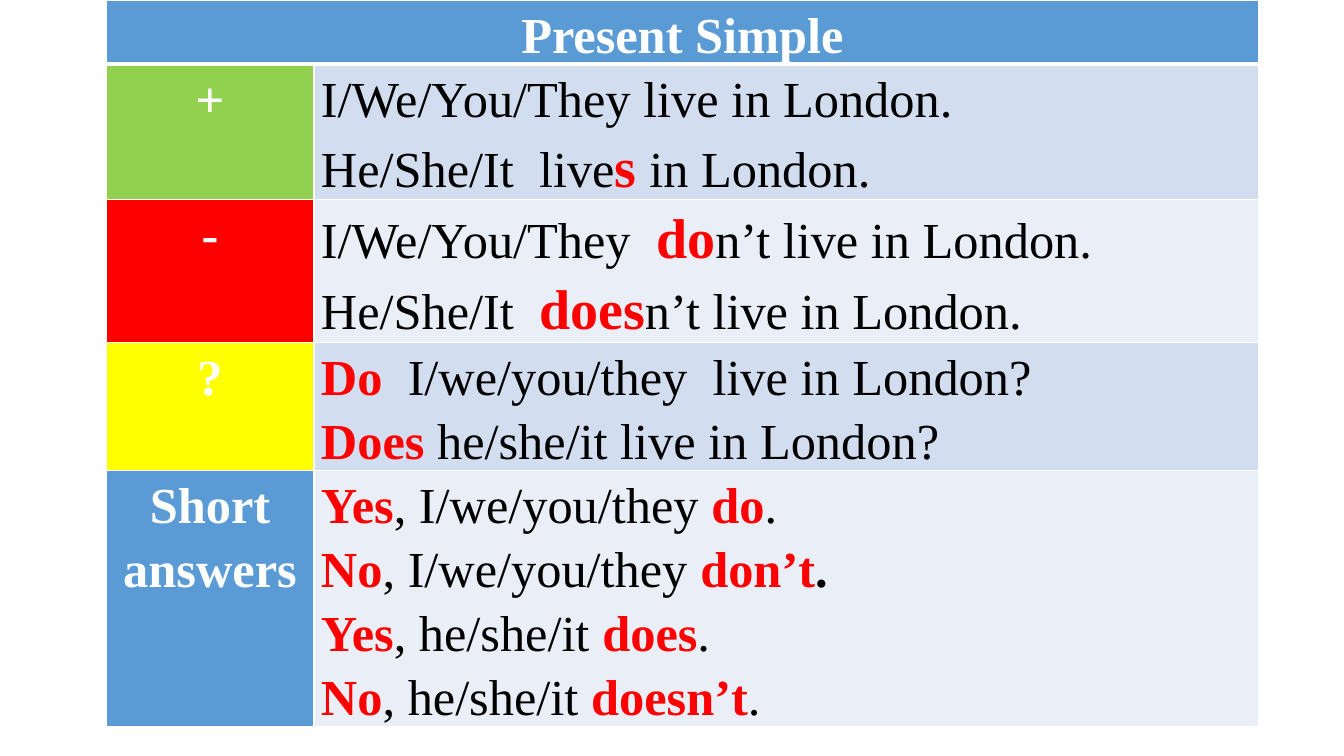
from lxml.etree import SubElement
from pptx import Presentation
from pptx.dml.color import RGBColor
from pptx.enum.text import PP_ALIGN
from pptx.oxml.ns import qn
from pptx.util import Emu, Pt

EMU_PER_PX = 914400 / 100.8

FONT = "Times New Roman"
WHITE = RGBColor(0xFF, 0xFF, 0xFF)
BLACK = RGBColor(0, 0, 0)
RED = RGBColor(0xFF, 0, 0)
BLUE = RGBColor(0x5B, 0x9B, 0xD5)
GREEN = RGBColor(0x92, 0xD0, 0x50)
YELLOW = RGBColor(0xFF, 0xFF, 0)
BAND_DARK = RGBColor(0xD2, 0xDE, 0xEF)
BAND_LIGHT = RGBColor(0xEA, 0xEF, 0xF7)

# Run styles: colour, bold, size in points
LABEL = (WHITE, True, 36)
PLAIN = (BLACK, False, 36)
STRONG = (BLACK, True, 36)
KEY = (RED, True, 36)
BIG_KEY = (RED, True, 40)

COLUMN_WIDTHS = (208, 945)
ROW_HEIGHTS = (60, 124, 124, 124, 252)

# Each form: label, label fill, sentences as lists of (text, style)
FORMS = [
    ("+", GREEN, [
        [("I/We/You/They live in London.", PLAIN)],
        [("He/She/It  live", PLAIN), ("s", BIG_KEY), (" in London.", PLAIN)],
    ]),
    ("-", RED, [
        [("I/We/You/They  ", PLAIN), ("do", BIG_KEY), ("n’t live in London.", PLAIN)],
        [("He/She/It  ", PLAIN), ("does", BIG_KEY), ("n’t live in London.", PLAIN)],
    ]),
    ("?", YELLOW, [
        [("Do", KEY), ("  I/we/you/they  live in London?", PLAIN)],
        [("Does", KEY), (" he/she/it live in London?", PLAIN)],
    ]),
    ("Short answers", BLUE, [
        [("Yes", KEY), (", I/we/you/they ", PLAIN), ("do", KEY), (".", PLAIN)],
        [("No", KEY), (", I/we/you/they ", PLAIN), ("don’t", KEY), (".", STRONG)],
        [("Yes", KEY), (", he/she/it ", PLAIN), ("does", KEY), (".", PLAIN)],
        [("No", KEY), (", he/she/it ", PLAIN), ("doesn’t", KEY), (".", PLAIN)],
    ]),
]


def px(length):
    return Emu(round(length * EMU_PER_PX))


def set_borders(cell, top=1, bottom=1):
    properties = cell._tc.get_or_add_tcPr()
    for side, width in (("L", 1), ("R", 1), ("T", top), ("B", bottom)):
        border = SubElement(properties, qn(f"a:ln{side}"), w=str(Pt(width)))
        fill = SubElement(border, qn("a:solidFill"))
        SubElement(fill, qn("a:srgbClr"), val=str(WHITE))


def fill_cell(cell, color, sentences, align=PP_ALIGN.LEFT):
    cell.fill.solid()
    cell.fill.fore_color.rgb = color
    cell.margin_left = cell.margin_right = px(7)
    cell.margin_top = cell.margin_bottom = 0
    for index, sentence in enumerate(sentences):
        frame = cell.text_frame
        paragraph = frame.add_paragraph() if index else frame.paragraphs[0]
        paragraph.alignment = align
        paragraph.line_spacing = 1.15
        for text, (font_color, bold, size) in sentence:
            run = paragraph.add_run()
            run.text = text
            run.font.name = FONT
            run.font.size = Pt(size)
            run.font.bold = bold
            run.font.color.rgb = font_color


def fill_label(cell, color, text):
    fill_cell(cell, color, [[(text, LABEL)]], PP_ALIGN.CENTER)


def add_grammar_table(slide):
    table = slide.shapes.add_table(
        len(ROW_HEIGHTS), len(COLUMN_WIDTHS), px(106), 0,
        px(sum(COLUMN_WIDTHS)), px(sum(ROW_HEIGHTS))).table
    for column, width in zip(table.columns, COLUMN_WIDTHS):
        column.width = px(width)
    for index, (row, height) in enumerate(zip(table.rows, ROW_HEIGHTS)):
        row.height = px(height)
        for cell in row.cells:
            # A thicker rule parts the heading from the forms
            set_borders(cell, top=3 if index == 1 else 1, bottom=3 if index == 0 else 1)
    return table


def main():
    presentation = Presentation()
    presentation.slide_width = px(1344)
    presentation.slide_height = px(756)
    slide = presentation.slides.add_slide(presentation.slide_layouts[6])
    grammar = add_grammar_table(slide)

    # Heading across both columns
    heading = grammar.cell(0, 0)
    heading.merge(grammar.cell(0, 1))
    fill_label(heading, BLUE, "Present Simple")

    # One row for each form, in alternating bands
    for row, (label, color, sentences) in enumerate(FORMS, start=1):
        fill_label(grammar.cell(row, 0), color, label)
        fill_cell(grammar.cell(row, 1), BAND_DARK if row % 2 else BAND_LIGHT, sentences)

    presentation.save("out.pptx")


if __name__ == "__main__":
    main()
